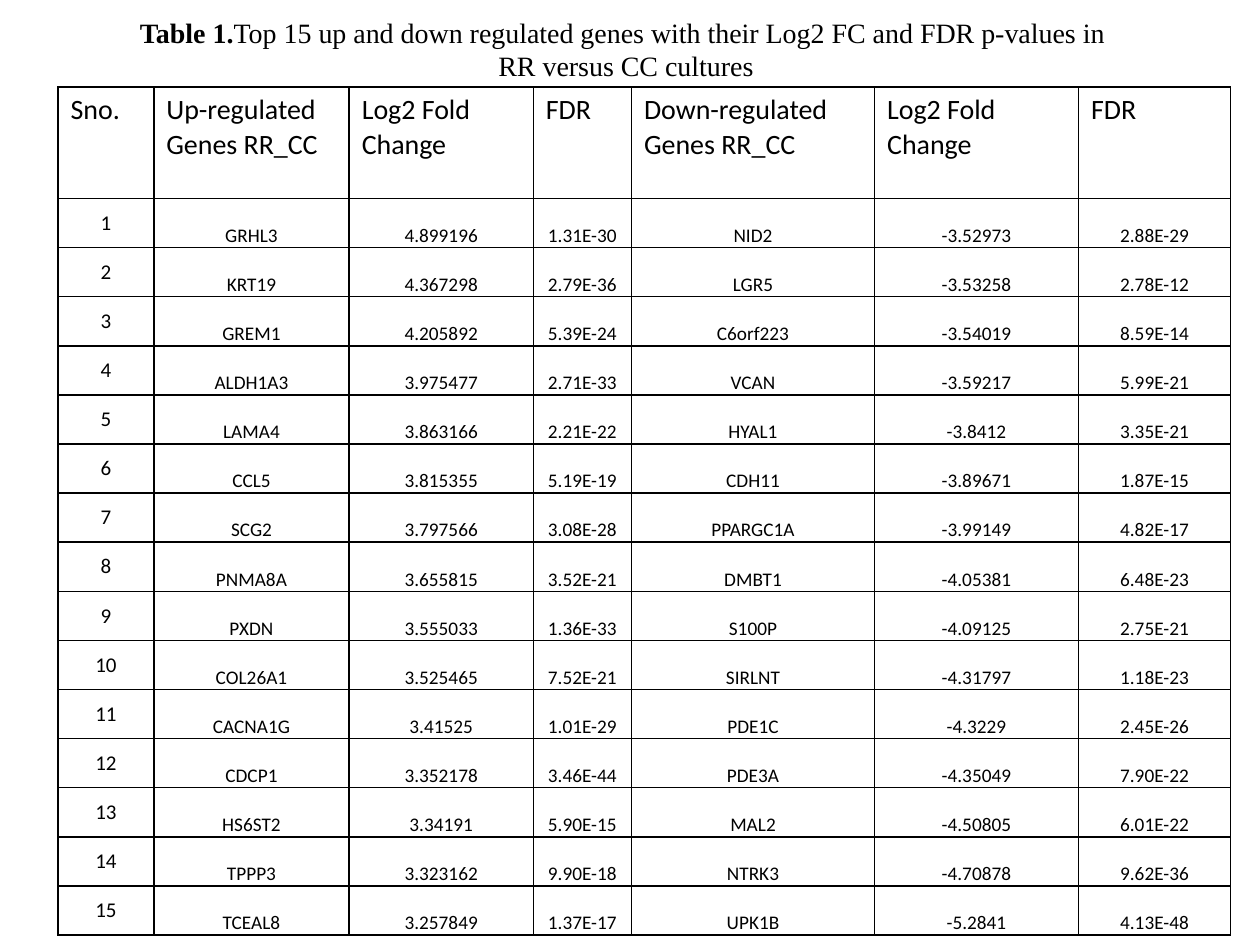
from lxml.etree import SubElement
from pptx import Presentation
from pptx.dml.color import RGBColor
from pptx.enum.text import MSO_ANCHOR, PP_ALIGN
from pptx.oxml.ns import qn
from pptx.util import Cm, Pt

BLACK = "000000"
COLUMN_WIDTHS = [1.93, 3.94, 3.71, 1.98, 4.9, 4.11, 3.07]
HEADER_HEIGHT, ROW_HEIGHT = 2.25, 0.99
HEADERS = ["Sno.", "Up-regulated Genes RR_CC", "Log2 Fold Change", "FDR",
           "Down-regulated Genes RR_CC", "Log2 Fold Change", "FDR"]
GENES = [
    ("GRHL3", "4.899196", "1.31E-30", "NID2", "-3.52973", "2.88E-29"),
    ("KRT19", "4.367298", "2.79E-36", "LGR5", "-3.53258", "2.78E-12"),
    ("GREM1", "4.205892", "5.39E-24", "C6orf223", "-3.54019", "8.59E-14"),
    ("ALDH1A3", "3.975477", "2.71E-33", "VCAN", "-3.59217", "5.99E-21"),
    ("LAMA4", "3.863166", "2.21E-22", "HYAL1", "-3.8412", "3.35E-21"),
    ("CCL5", "3.815355", "5.19E-19", "CDH11", "-3.89671", "1.87E-15"),
    ("SCG2", "3.797566", "3.08E-28", "PPARGC1A", "-3.99149", "4.82E-17"),
    ("PNMA8A", "3.655815", "3.52E-21", "DMBT1", "-4.05381", "6.48E-23"),
    ("PXDN", "3.555033", "1.36E-33", "S100P", "-4.09125", "2.75E-21"),
    ("COL26A1", "3.525465", "7.52E-21", "SIRLNT", "-4.31797", "1.18E-23"),
    ("CACNA1G", "3.41525", "1.01E-29", "PDE1C", "-4.3229", "2.45E-26"),
    ("CDCP1", "3.352178", "3.46E-44", "PDE3A", "-4.35049", "7.90E-22"),
    ("HS6ST2", "3.34191", "5.90E-15", "MAL2", "-4.50805", "6.01E-22"),
    ("TPPP3", "3.323162", "9.90E-18", "NTRK3", "-4.70878", "9.62E-36"),
    ("TCEAL8", "3.257849", "1.37E-17", "UPK1B", "-5.2841", "4.13E-48"),
]


def rgb(value):
    return RGBColor.from_string(value)


def add_text(p, text, size=16, font="Calibri", color=BLACK, bold=False,
             align=PP_ALIGN.LEFT):
    p.alignment = align
    r = p.add_run()
    r.text = text
    r.font.size = Pt(size)
    r.font.name = font
    r.font.bold = bold
    r.font.color.rgb = rgb(color)


def set_borders(cell, color=BLACK, width=1):
    """Draw all four edges; they must come before the fill in the cell XML."""
    tcPr = cell._tc.get_or_add_tcPr()
    for i, edge in enumerate(("a:lnL", "a:lnR", "a:lnT", "a:lnB")):
        ln = SubElement(tcPr, qn(edge), w=str(Pt(width)))
        fill = SubElement(ln, qn("a:solidFill"))
        SubElement(fill, qn("a:srgbClr"), val=color)
        tcPr.insert(i, ln)


def fill_cell(cell, text, anchor=MSO_ANCHOR.TOP, tight=False, **fmt):
    cell.vertical_anchor = anchor
    if tight:
        cell.margin_left = cell.margin_right = cell.margin_top = Cm(0.03)
        cell.margin_bottom = 0
    cell.fill.background()
    set_borders(cell)
    add_text(cell.text_frame.paragraphs[0], text, **fmt)


def add_gene_table(s):
    table = s.shapes.add_table(
        len(GENES) + 1, len(HEADERS), Cm(1.17), Cm(1.75),
        Cm(sum(COLUMN_WIDTHS)), Cm(HEADER_HEIGHT + ROW_HEIGHT * len(GENES))).table
    table.first_row = table.horz_banding = False
    for column, width in zip(table.columns, COLUMN_WIDTHS):
        column.width = Cm(width)
    for i, row in enumerate(table.rows):
        row.height = Cm(ROW_HEIGHT if i else HEADER_HEIGHT)
    for col, header in enumerate(HEADERS):
        fill_cell(table.cell(0, col), header)
    for number, values in enumerate(GENES, start=1):
        fill_cell(table.cell(number, 0), str(number), anchor=MSO_ANCHOR.MIDDLE,
                  size=12, align=PP_ALIGN.CENTER)
        for col, value in enumerate(values, start=1):
            fill_cell(table.cell(number, col), value, anchor=MSO_ANCHOR.BOTTOM,
                      tight=True, size=11, align=PP_ALIGN.CENTER)


def add_caption(s):
    tf = s.shapes.add_textbox(Cm(-0.3), Cm(0.18), Cm(25.7), Cm(2.31)).text_frame
    tf.word_wrap = True
    fmt = {"font": "Times New Roman", "align": PP_ALIGN.CENTER}
    p = tf.paragraphs[0]
    add_text(p, "Table 1.", bold=True, **fmt)
    add_text(p, "Top 15 up and down regulated genes with their Log2 FC "
                "and FDR p-values in", **fmt)
    add_text(tf.add_paragraph(), " RR versus CC cultures", **fmt)


def main():
    prs = Presentation()
    prs.slide_width, prs.slide_height = Cm(25.4), Cm(19.05)
    s = prs.slides.add_slide(prs.slide_layouts[6])
    add_gene_table(s)
    add_caption(s)
    prs.save("out.pptx")


if __name__ == "__main__":
    main()
